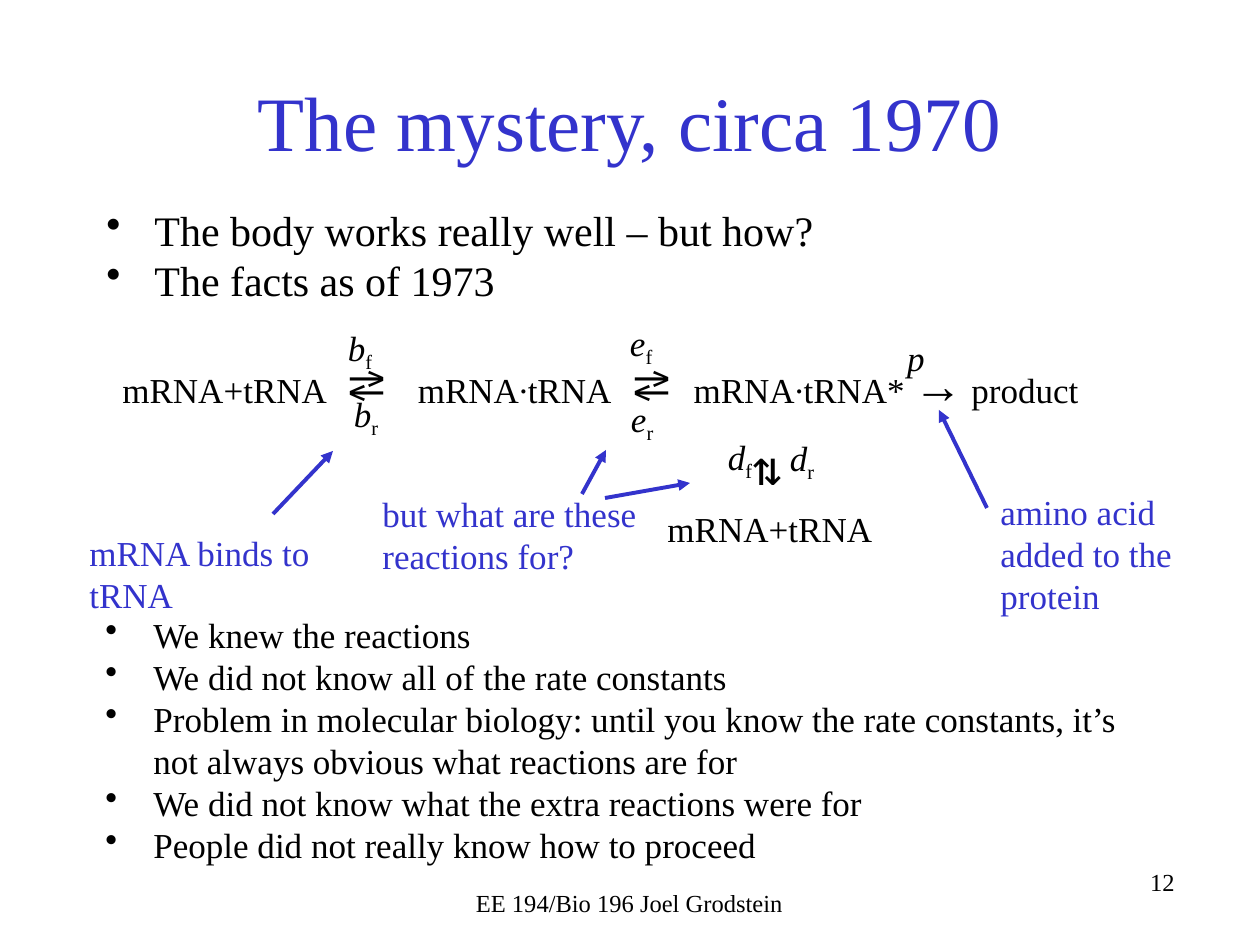
from lxml.etree import SubElement
from pptx import Presentation
from pptx.dml.color import RGBColor
from pptx.enum.shapes import MSO_CONNECTOR
from pptx.enum.text import MSO_ANCHOR, MSO_AUTO_SIZE as FIT, PP_ALIGN as ALIGN
from pptx.oxml.ns import qn
from pptx.util import Emu, Pt

SCALE = 914400 / 126
BLACK = RGBColor(0x00, 0x00, 0x00)
BLUE = RGBColor(0x33, 0x33, 0xCC)
SERIF = "Times New Roman"
BULLET_INDENT = 48

FACTS = ["The body works really well – but how?", "The facts as of 1973"]
CONCLUSIONS = [
    "We knew the reactions",
    "We did not know all of the rate constants",
    "Problem in molecular biology: until you know the rate constants, "
    "it’s not always obvious what reactions are for",
    "We did not know what the extra reactions were for",
    "People did not really know how to proceed",
]
REACTION = [
    ("mRNA+tRNA  ", 20), ("⇄", 28), ("   mRNA∙tRNA  ", 20), ("⇄", 28),
    ("  mRNA∙tRNA* ", 20), ("→", 28), (" product", 20),
]
# symbol, subscript, left, top, width
RATE_CONSTANTS = [
    ("b", "f", 348, 326, 25), ("b", "r", 354, 392, 25),
    ("e", "f", 630, 321, 24), ("e", "r", 631, 397, 24),
    ("d", "f", 728, 435, 25), ("d", "r", 790, 436, 25),
    ("p", "", 907, 336, 18),
]
REMARKS = [
    ("mRNA binds to tRNA", (77, 525, 251, 97)),
    ("amino acid added to the protein", (988, 484, 209, 140)),
    ("but what are these reactions for?", (370, 486, 285, 97)),
]
POINTERS = [
    ((273, 514), (333, 451)),
    ((987, 508), (939, 410)),
    ((582, 494), (606, 450)),
    ((605, 498), (690, 483)),
]


def px(length):
    return Emu(round(length * SCALE))


def style(font, size, color=BLACK, name=SERIF):
    font.size, font.name = Pt(size), name
    font.color.rgb = color


def add_frame(slide, box):
    frame = slide.shapes.add_textbox(*map(px, box)).text_frame
    frame.word_wrap = True
    return frame


def add_text(slide, text, box, size=20, color=BLACK, align=ALIGN.LEFT,
             name=SERIF):
    frame = add_frame(slide, box)
    frame.text = text
    line = frame.paragraphs[0]
    line.alignment = align
    style(line.runs[0].font, size, color, name)
    return frame


def add_bullets(slide, items, box, size):
    frame = add_frame(slide, box)
    frame.text = "\n".join(items)
    for item in frame.paragraphs:
        style(item.runs[0].font, size)
        properties = item._p.get_or_add_pPr()
        properties.set("marL", str(px(BULLET_INDENT)))
        properties.set("indent", str(-px(BULLET_INDENT)))
        SubElement(properties, qn("a:buChar")).set("char", "•")


def add_reaction(slide, parts, box):
    line = add_frame(slide, box).paragraphs[0]
    for text, size in parts:
        run = line.add_run()
        run.text = text
        style(run.font, size)


def add_rate_constant(slide, symbol, subscript, left, top, width):
    frame = add_text(slide, symbol, (left, top, width, 43))
    frame.margin_left = frame.margin_right = 0
    frame.margin_top = frame.margin_bottom = 0
    frame.word_wrap = False
    frame.auto_size = FIT.SHAPE_TO_FIT_TEXT
    line = frame.paragraphs[0]
    line.runs[0].font.italic = True
    if subscript:
        index = line.add_run()
        index.text = subscript
        style(index.font, 20)
        index.font.italic = False
        index._r.get_or_add_rPr().set("baseline", "-25000")


def add_pointer(slide, start, end):
    pointer = slide.shapes.add_connector(
        MSO_CONNECTOR.STRAIGHT, *map(px, start + end))
    pointer.line.color.rgb = BLUE
    pointer.line.width = Pt(2.25)
    SubElement(pointer.line._get_or_add_ln(),
               qn("a:tailEnd")).set("type", "triangle")
    SubElement(pointer._element.spPr, qn("a:effectLst"))


def main():
    deck = Presentation()
    deck.slide_width, deck.slide_height = px(1260), px(945)
    slide = deck.slides.add_slide(deck.slide_layouts[6])

    add_text(slide, "12", (788, 861, 399, 63), 14, align=ALIGN.RIGHT)
    title = add_text(slide, "The mystery, circa 1970", (94, 42, 1072, 157),
                     44, BLUE, ALIGN.CENTER)
    title.vertical_anchor = MSO_ANCHOR.MIDDLE
    add_bullets(slide, FACTS, (94, 198, 1071, 150), 24)
    add_text(slide, "EE 194/Bio 196 Joel Grodstein", (430, 882, 399, 63),
             14, align=ALIGN.CENTER)

    add_reaction(slide, REACTION, (110, 348, 1032, 72))
    add_text(slide, "mRNA+tRNA", (655, 501, 306, 55))
    add_text(slide, "⇅", (740, 430, 71, 72), 28, name="DejaVu Sans Mono")
    for constant in RATE_CONSTANTS:
        add_rate_constant(slide, *constant)

    add_bullets(slide, CONCLUSIONS, (93, 607, 1042, 258), 20)
    for remark, box in REMARKS:
        add_text(slide, remark, box, color=BLUE)
    for start, end in POINTERS:
        add_pointer(slide, start, end)

    deck.save("out.pptx")


if __name__ == "__main__":
    main()
